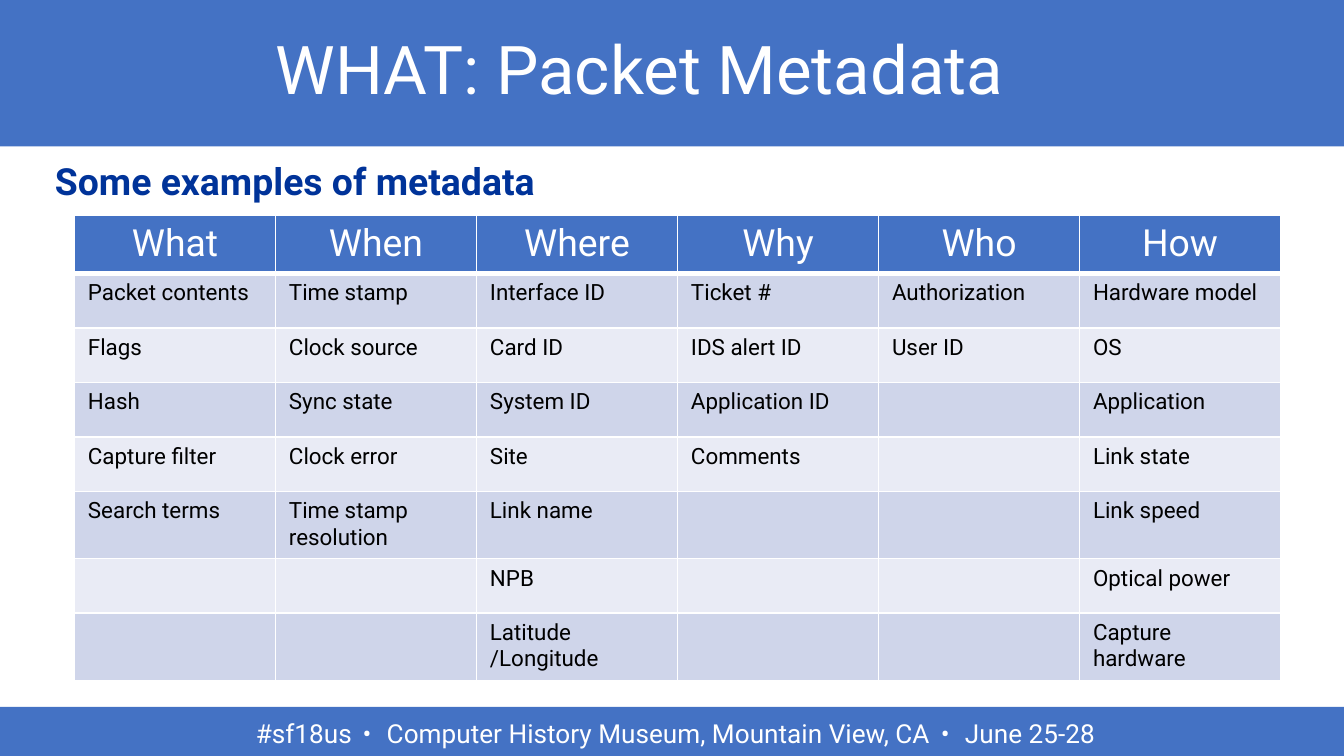
from lxml import etree
from pptx import Presentation
from pptx import util as u
from pptx.dml.color import RGBColor
from pptx.enum import shapes, text
from pptx.oxml import ns

Pt = u.Pt
COLORS = {"blue": "4472C4", "navy": "003399", "white": "FFFFFF",
          "black": "000000", "dark_row": "CFD5EA", "light_row": "E9EBF5"}
METADATA = {
    "What": ["Packet contents", "Flags", "Hash", "Capture filter", "Search terms"],
    "When": ["Time stamp", "Clock source", "Sync state", "Clock error",
             "Time stamp resolution"],
    "Where": ["Interface ID", "Card ID", "System ID", "Site", "Link name", "NPB",
              "Latitude /Longitude"],
    "Why": ["Ticket #", "IDS alert ID", "Application ID", "Comments"],
    "Who": ["Authorization", "User ID"],
    "How": ["Hardware model", "OS", "Application", "Link state", "Link speed",
            "Optical power", "Capture hardware"],
}
EVENT = ["#sf18us", "Computer History Museum, Mountain View, CA", "June 25-28"]


class MetadataSlide:
    """Holds the style and the current slide, and adds each kind of element."""

    def __init__(self, slide, font="Roboto"):
        self.slide = slide
        self.font = font

    def color(self, name):
        return RGBColor.from_string(COLORS[name])

    def run(self, paragraph, words, size, color, bold=False, spacing=None):
        run = paragraph.add_run()
        run.text = words
        run.font.name = self.font
        run.font.size = Pt(size)
        run.font.bold = bold
        run.font.color.rgb = self.color(color)
        if spacing:
            run.font._element.set("spc", str(spacing))

    def band(self, top, height):
        band = self.slide.shapes.add_shape(
            shapes.MSO_SHAPE.RECTANGLE, 0, Pt(top), Pt(720), Pt(height))
        band.shadow.inherit = False
        band.fill.solid()
        band.fill.fore_color.rgb = self.color("blue")
        band.line.fill.background()
        self.slide.shapes.title.element.addprevious(band.element)

    def title(self, words, left, top, width, height):
        title = self.slide.shapes.title
        title.left, title.top = Pt(left), Pt(top)
        title.width, title.height = Pt(width), Pt(height)
        frame = title.text_frame
        frame.auto_size = text.MSO_AUTO_SIZE.NONE
        frame.vertical_anchor = text.MSO_ANCHOR.MIDDLE
        frame.margin_top = frame.margin_bottom = Pt(7.2)
        heading = frame.paragraphs[0]
        heading.alignment = text.PP_ALIGN.CENTER
        heading.line_spacing = 0.9
        self.run(heading, words, 36, "white")

    def textbox(self, left, top, width, height, align=text.PP_ALIGN.LEFT):
        box = self.slide.shapes.add_textbox(Pt(left), Pt(top), Pt(width), Pt(height))
        box.text_frame.word_wrap = True
        paragraph = box.text_frame.paragraphs[0]
        paragraph.alignment = align
        return paragraph

    def borders(self, cell, bottom):
        for side, width in (("L", 1), ("R", 1), ("T", 1), ("B", bottom)):
            edge = etree.SubElement(cell._tc.get_or_add_tcPr(), ns.qn(f"a:ln{side}"),
                                    w=str(Pt(width)))
            fill = etree.SubElement(edge, ns.qn("a:solidFill"))
            etree.SubElement(fill, ns.qn("a:srgbClr"), val=COLORS["white"])

    def cell(self, cell, words, size, color, fill, header):
        self.borders(cell, 3 if header else 1)
        cell.fill.solid()
        cell.fill.fore_color.rgb = self.color(fill)
        entry = cell.text_frame.paragraphs[0]
        if header:
            entry.alignment = text.PP_ALIGN.CENTER
        if words:
            self.run(entry, words, size, color)

    def table(self, columns, left, top, column_width, row_height):
        row_count = 1 + max(len(entries) for entries in columns.values())
        table = self.slide.shapes.add_table(
            row_count, len(columns), Pt(left), Pt(top),
            Pt(column_width * len(columns)), Pt(row_height * row_count)).table
        for row in table.rows:
            row.height = Pt(row_height)
        for c, (question, entries) in enumerate(columns.items()):
            table.columns[c].width = Pt(column_width)
            self.cell(table.cell(0, c), question, 20, "white", "blue", True)
            for r in range(1, row_count):
                words = entries[r - 1] if r <= len(entries) else ""
                fill = "dark_row" if r % 2 else "light_row"
                self.cell(table.cell(r, c), words, 12, "black", fill, False)


def main():
    deck = Presentation()
    deck.slide_width, deck.slide_height = Pt(720), Pt(405)
    page = MetadataSlide(deck.slides.add_slide(deck.slide_layouts[5]))
    page.band(0, 78.5)
    page.band(378.7, 28)
    page.title("WHAT: Packet Metadata", 73.4, 0.7, 538.6, 77)

    footer = page.textbox(36, 380.9, 651.6, 28, text.PP_ALIGN.CENTER)
    for i, detail in enumerate(EVENT):
        if i:
            page.run(footer, " • ", 14, "white", spacing=230)
        page.run(footer, detail, 14, "white")

    subtitle = page.textbox(22.3, 81.4, 680.4, 31.7)
    page.run(subtitle, "Some examples of metadata", 20, "navy", bold=True)
    page.table(METADATA, 39.9, 115.2, 107.7, 29.2)
    deck.save("out.pptx")


if __name__ == "__main__":
    main()
